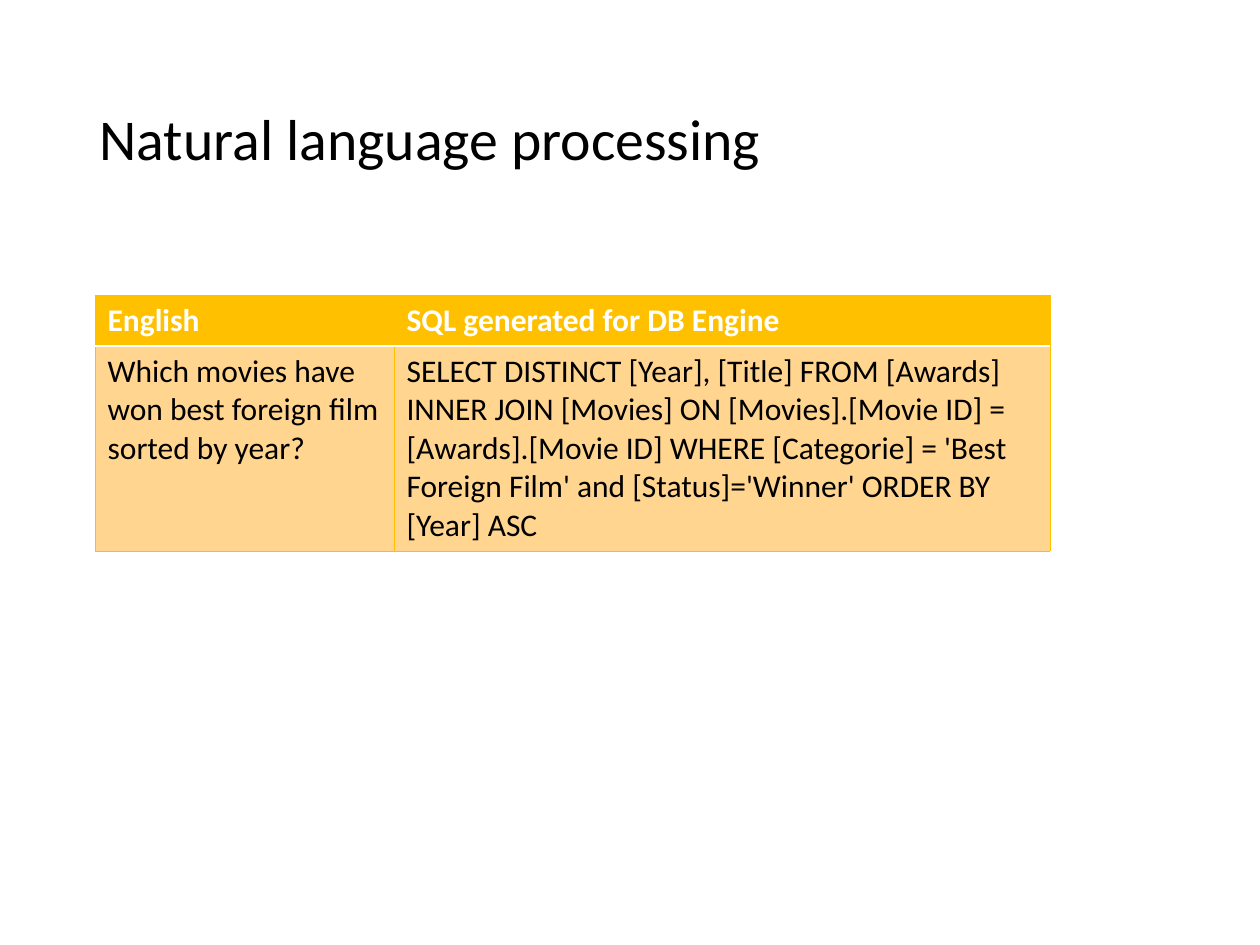
from lxml import etree
from pptx import Presentation
from pptx import util as u
from pptx.dml.color import RGBColor
from pptx.enum import text
from pptx.oxml import ns

PX = u.Inches(1) / 126
FONT = "Calibri"
BLACK = RGBColor(0x00, 0x00, 0x00)
WHITE = RGBColor(0xFF, 0xFF, 0xFF)
GOLD = RGBColor(0xFF, 0xC0, 0x00)
PEACH = RGBColor(0xFF, 0xD5, 0x8F)

COL_WIDTHS = (299, 656)
ROW_HEIGHTS = (51, 205)
ROWS = (
    ("English", "SQL generated for DB Engine"),
    ("Which movies have won best foreign film sorted by year?",
     "SELECT DISTINCT [Year], [Title] FROM [Awards] INNER JOIN [Movies] ON "
     "[Movies].[Movie ID] = [Awards].[Movie ID] WHERE [Categorie] = "
     "'Best Foreign Film' and [Status]='Winner' ORDER BY [Year] ASC"),
)


def px(n):
    return u.Emu(round(n * PX))


def write(tf, content, size=18, color=BLACK, bold=False, spacing=None):
    p = tf.paragraphs[0]
    p.alignment = text.PP_ALIGN.LEFT
    p.line_spacing = spacing
    r = p.add_run()
    r.text = content
    r.font.name = FONT
    r.font.size = u.Pt(size)
    r.font.bold = bold
    r.font.color.rgb = color


def set_borders(cell, **sides):
    """Draw borders given as side=(color, points), in the order L, R, T, B."""
    tc_pr = cell._tc.get_or_add_tcPr()
    for i, side in enumerate(side for side in "LRTB" if side in sides):
        color, width = sides[side]
        ln = etree.Element(ns.qn(f"a:ln{side}"), w=str(u.Pt(width)))
        fill = etree.SubElement(ln, ns.qn("a:solidFill"))
        etree.SubElement(fill, ns.qn("a:srgbClr"), val=str(color))
        tc_pr.insert(i, ln)


def add_title(s, content):
    title = s.shapes.title
    title.left, title.top, title.width, title.height = map(px, (87, 50, 1086, 183))
    tf = title.text_frame
    tf.word_wrap = True
    tf.vertical_anchor = text.MSO_ANCHOR.MIDDLE
    write(tf, content, size=33, spacing=0.9)


def add_query_table(s, left, top):
    frame = s.shapes.add_table(len(ROWS), len(COL_WIDTHS), px(left), px(top),
                               px(sum(COL_WIDTHS)), px(sum(ROW_HEIGHTS)))
    table = frame.table
    for col, width in zip(table.columns, COL_WIDTHS):
        col.width = px(width)
    for row, height in zip(table.rows, ROW_HEIGHTS):
        row.height = px(height)
    thin, rule = (GOLD, 0.5), (WHITE, 1)
    for i, row in enumerate(ROWS):
        header = i == 0
        for j, content in enumerate(row):
            cell = table.cell(i, j)
            cell.fill.solid()
            cell.fill.fore_color.rgb = GOLD if header else PEACH
            write(cell.text_frame, content, bold=header,
                  color=WHITE if header else BLACK)
            set_borders(cell, L=thin, R=thin, T=thin if header else rule,
                        B=rule if header else thin)


def main():
    prs = Presentation()
    prs.slide_width, prs.slide_height = u.Inches(10), u.Inches(7.5)
    s = prs.slides.add_slide(prs.slide_layouts[5])
    add_title(s, "Natural language processing")
    add_query_table(s, 95, 295)
    prs.save("out.pptx")


if __name__ == "__main__":
    main()
